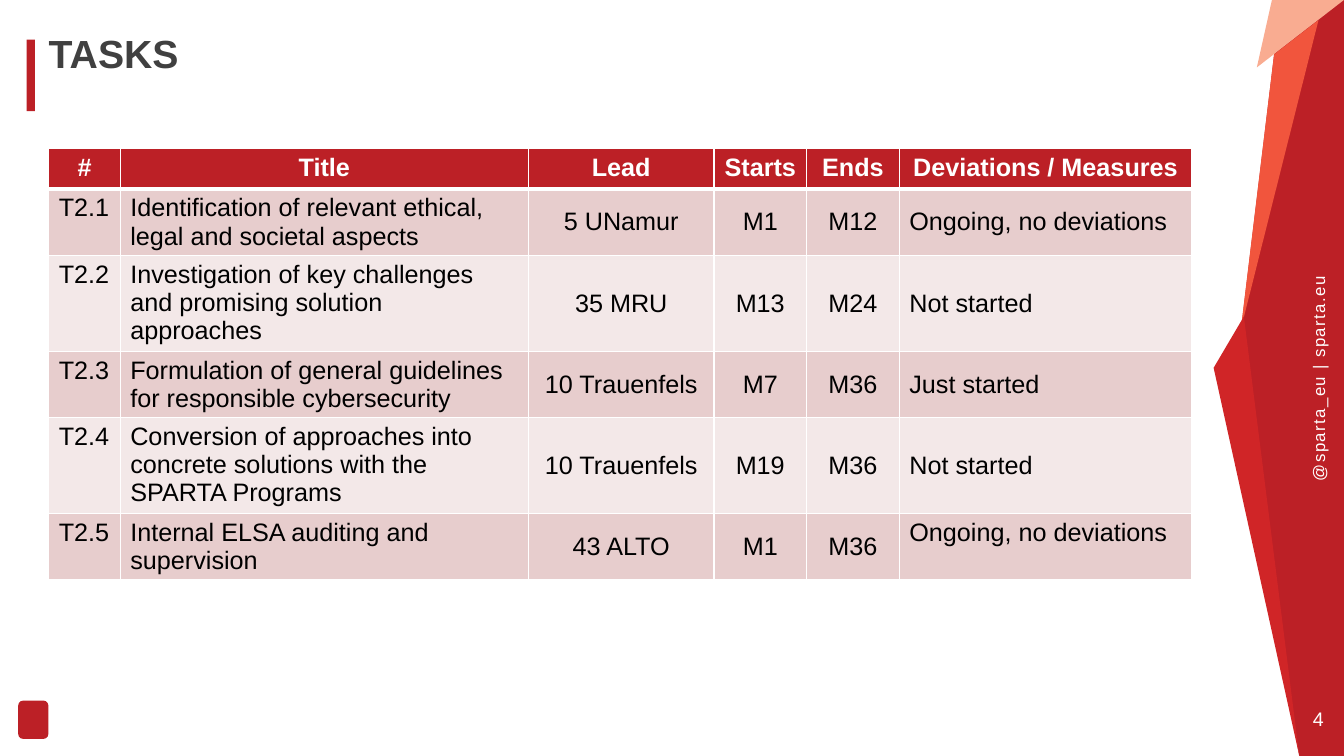
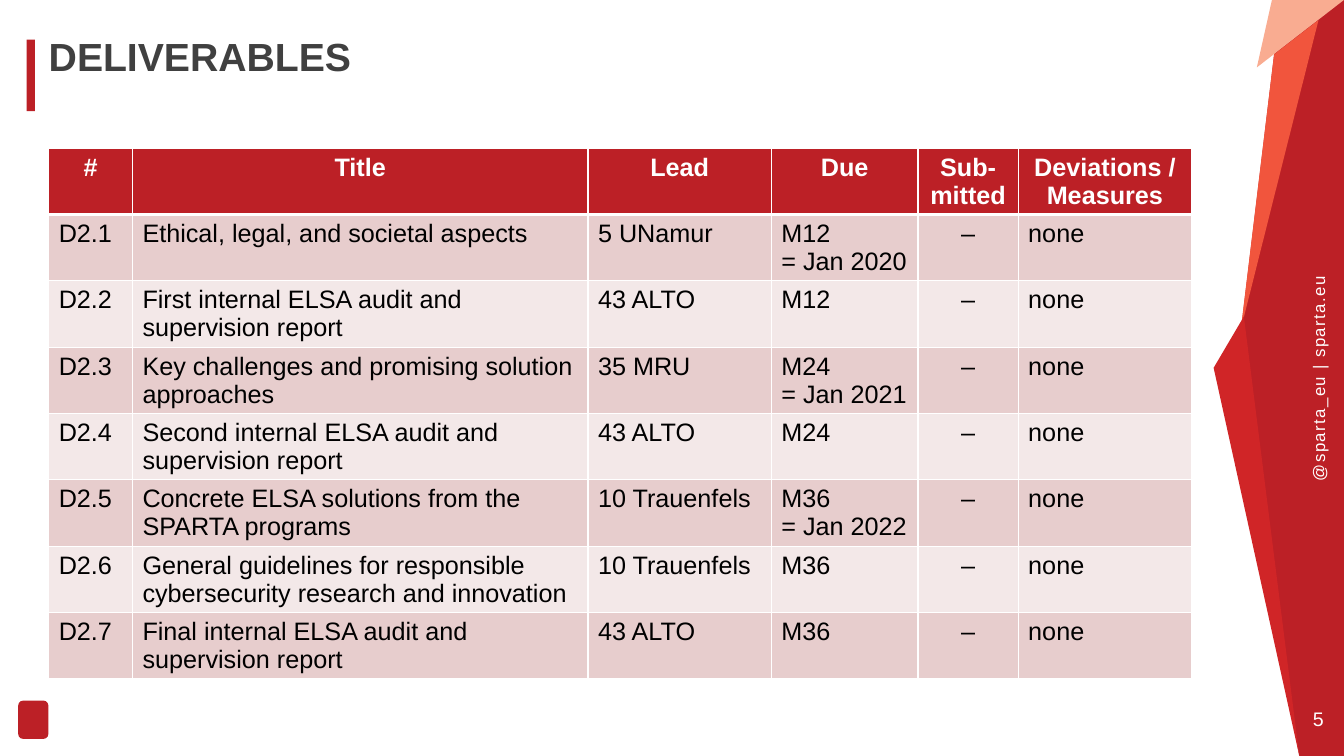
import pptx
import pptx.util
import pptx.dml.color
import pptx.enum.shapes
import pptx.enum.text
import pptx.oxml
import pptx.oxml.ns

Pt = pptx.util.Pt
RGBColor = pptx.dml.color.RGBColor
ALIGN = pptx.enum.text.PP_ALIGN
ANCHOR = pptx.enum.text.MSO_ANCHOR
SHAPE = pptx.enum.shapes.MSO_SHAPE

# Shared style
FONT = "Arial"
WHITE = RGBColor(0xFF, 0xFF, 0xFF)
BLACK = RGBColor(0x00, 0x00, 0x00)
GREY = RGBColor(0x40, 0x40, 0x40)
RED = RGBColor(0xBC, 0x20, 0x26)
BRIGHT_RED = RGBColor(0xD0, 0x25, 0x27)
ORANGE = RGBColor(0xF1, 0x55, 0x3D)
PEACH = RGBColor(0xF9, 0xAC, 0x91)
ROW_DARK = RGBColor(0xE7, 0xCD, 0xCD)
ROW_LIGHT = RGBColor(0xF3, 0xE8, 0xE8)

PAGE_WIDTH, PAGE_HEIGHT = 960, 540
LEFT, CONTENT_WIDTH = 34.8, 816.5
TABLE_TOP = 105.8
ONE_LINE, TWO_LINES, THREE_LINES = 29.2, 47.4, 68.4
THIN, THICK = 1, 3

# Facets of the band at the right edge, back to front
BAND_FACETS = [
    (RED, [(960, 0), (960, 540), (928.1, 540), (880.6, 283.7), (910.1, 38.9), (918.7, 0)]),
    (PEACH, [(960, 0), (897.8, 48.2), (908.6, 0)]),
    (ORANGE, [(941.8, 14.4), (886.3, 235.4), (910.1, 38.9)]),
    (BRIGHT_RED, [(888.5, 226.1), (928.1, 540), (866.9, 262.8)]),
]

# Table columns: heading, width, alignment, vertical anchor
TASK_COLUMNS = [
    ("#", 51.1, ALIGN.LEFT, ANCHOR.TOP),
    ("Title", 291.6, ALIGN.LEFT, ANCHOR.TOP),
    ("Lead", 132.5, ALIGN.CENTER, ANCHOR.MIDDLE),
    ("Starts", 66.2, ALIGN.CENTER, ANCHOR.MIDDLE),
    ("Ends", 66.2, ALIGN.CENTER, ANCHOR.MIDDLE),
    ("Deviations / Measures", 208.9, ALIGN.LEFT, ANCHOR.MIDDLE),
]
TASK_HEIGHTS = [ONE_LINE, TWO_LINES, THREE_LINES, TWO_LINES, THREE_LINES, TWO_LINES]
TASKS = [
    ("T2.1", "Identification of relevant ethical, legal and societal aspects",
     "5 UNamur", "M1", "M12", "Ongoing, no deviations"),
    ("T2.2", "Investigation of key challenges and promising solution approaches",
     "35 MRU", "M13", "M24", "Not started"),
    ("T2.3", "Formulation of general guidelines for responsible cybersecurity",
     "10 Trauenfels", "M7", "M36", "Just started"),
    ("T2.4", "Conversion of approaches into concrete solutions with the SPARTA Programs",
     "10 Trauenfels", "M19", "M36", "Not started"),
    ("T2.5", "Internal ELSA auditing and supervision",
     "43 ALTO", "M1", "M36", "Ongoing, no deviations"),
]
DELIVERABLE_COLUMNS = [
    ("#", 59.8, ALIGN.LEFT, ANCHOR.TOP),
    ("Title", 325.4, ALIGN.LEFT, ANCHOR.TOP),
    ("Lead", 131, ALIGN.LEFT, ANCHOR.TOP),
    ("Due", 104.8, ALIGN.LEFT, ANCHOR.TOP),
    ("Sub-mitted", 71.5, ALIGN.CENTER, ANCHOR.TOP),
    ("Deviations / Measures", 124, ALIGN.LEFT, ANCHOR.TOP),
]
DELIVERABLES = [
    ("Ethical, legal, and societal aspects", "5 UNamur", "M12\n= Jan 2020"),
    ("First internal ELSA audit and supervision report", "43 ALTO", "M12"),
    ("Key challenges and promising solution approaches", "35 MRU", "M24\n= Jan 2021"),
    ("Second internal ELSA audit and supervision report", "43 ALTO", "M24"),
    ("Concrete ELSA solutions from the SPARTA programs", "10 Trauenfels", "M36\n= Jan 2022"),
    ("General guidelines for responsible cybersecurity research and innovation",
     "10 Trauenfels", "M36"),
    ("Final internal ELSA audit and supervision report", "43 ALTO", "M36"),
]


def write(para, text, size, color, bold=False, align=ALIGN.LEFT):
    """Fill a paragraph with one run per line of text."""
    para.alignment = align
    for index, line in enumerate(text.split("\n")):
        if index:
            para.add_line_break()
        span = para.add_run()
        span.text = line
        span.font.name = FONT
        span.font.size = Pt(size)
        span.font.bold = bold
        span.font.color.rgb = color


def clear_insets(frame):
    frame.margin_left = frame.margin_right = frame.margin_top = frame.margin_bottom = 0


def paint(shape, color):
    shape.fill.solid()
    shape.fill.fore_color.rgb = color
    shape.line.fill.background()
    shape.shadow.inherit = False
    return shape


def add_facet(page, color, corners):
    points = [(Pt(x), Pt(y)) for x, y in corners]
    builder = page.shapes.build_freeform(*points[0])
    builder.add_line_segments(points[1:], close=True)
    return paint(builder.convert_to_shape(), color)


def add_block(page, kind, left, top, width, height):
    return paint(page.shapes.add_shape(kind, Pt(left), Pt(top), Pt(width), Pt(height)), RED)


def add_label(page, text, size, left, top, width, height):
    """Add a centred white one-line label."""
    box = page.shapes.add_textbox(Pt(left), Pt(top), Pt(width), Pt(height))
    frame = box.text_frame
    clear_insets(frame)
    frame.word_wrap = False
    frame.vertical_anchor = ANCHOR.MIDDLE
    write(frame.paragraphs[0], text, size, WHITE, align=ALIGN.CENTER)
    return box


def furnish_layout(layout, page):
    """Draw the shared parts on a page, then move them to its layout."""
    for holder in list(layout.placeholders):
        if holder.placeholder_format.idx:
            holder.element.getparent().remove(holder.element)
    parts = [add_facet(page, color, corners) for color, corners in BAND_FACETS]
    handle = add_label(page, "@sparta_eu | sparta.eu", 12, 867.6, 263.3, 148.3, 14.4)
    handle.rotation = 270
    handle.text_frame.paragraphs[0].runs[0].font._element.set("spc", "100")
    parts.append(handle)
    parts.append(add_block(page, SHAPE.RECTANGLE, 19.1, 28.3, 5.8, 51.1))
    parts.append(add_block(page, SHAPE.ROUNDED_RECTANGLE, 13, 500.4, 21.6, 27.4))
    for part in parts:
        layout.shapes.element.append(part.element)


def set_title(page, text, top):
    title = page.shapes.title
    title.left, title.top = Pt(LEFT), Pt(top)
    title.width, title.height = Pt(CONTENT_WIDTH), Pt(62.6)
    frame = title.text_frame
    clear_insets(frame)
    frame.word_wrap = True
    frame.auto_size = pptx.enum.text.MSO_AUTO_SIZE.NONE
    frame.vertical_anchor = ANCHOR.TOP
    para = frame.paragraphs[0]
    para.line_spacing = 0.9
    write(para, text, 28, GREY, bold=True)


def set_borders(cell, top, bottom):
    """Give a cell white borders; they come before its fill in the XML."""
    properties = cell._tc.get_or_add_tcPr()
    widths = {"lnL": THIN, "lnR": THIN, "lnT": top, "lnB": bottom}
    for index, (side, width) in enumerate(widths.items()):
        line = pptx.oxml.parse_xml(
            f'<a:{side} {pptx.oxml.ns.nsdecls("a")} w="{Pt(width)}">'
            f'<a:solidFill><a:srgbClr val="{WHITE}"/></a:solidFill></a:{side}>')
        properties.insert(index, line)


def fill_cell(cell, text, fill, color, bold, align, anchor):
    cell.fill.solid()
    cell.fill.fore_color.rgb = fill
    cell.vertical_anchor = anchor
    cell.margin_top = Pt(3.6 if anchor == ANCHOR.TOP else 0)
    cell.margin_bottom = 0
    write(cell.text_frame.paragraphs[0], text, 18, color, bold, align)


def add_grid(page, columns, rows, heights):
    """Add a table with a red heading row and alternating body rows."""
    table = page.shapes.add_table(
        len(heights), len(columns), Pt(LEFT), Pt(TABLE_TOP),
        Pt(CONTENT_WIDTH), Pt(sum(heights))).table
    table.horz_banding = False
    for row, height in zip(table.rows, heights):
        row.height = Pt(height)
    for column, (heading, width, align, anchor) in enumerate(columns):
        table.columns[column].width = Pt(width)
        cell = table.cell(0, column)
        fill_cell(cell, heading, RED, WHITE, True, ALIGN.CENTER, ANCHOR.TOP)
        set_borders(cell, THIN, THICK)
        for index, row in enumerate(rows, start=1):
            cell = table.cell(index, column)
            fill = ROW_DARK if index % 2 else ROW_LIGHT
            fill_cell(cell, row[column], fill, BLACK, False, align, anchor)
            set_borders(cell, THICK if index == 1 else THIN, THIN)
    return table


def add_page(deck, layout, title, title_top, number):
    page = deck.slides.add_slide(layout)
    set_title(page, title, title_top)
    add_label(page, str(number), 14, 933.1, 504.7, 17.3, 17.3)
    return page


def main():
    deck = pptx.Presentation()
    deck.slide_width, deck.slide_height = Pt(PAGE_WIDTH), Pt(PAGE_HEIGHT)
    layout = deck.slide_layouts[5]

    # Tasks
    page = add_page(deck, layout, "TASKS", 24.6, 4)
    furnish_layout(layout, page)
    table = add_grid(page, TASK_COLUMNS, TASKS, TASK_HEIGHTS)
    last_cell = table.cell(len(TASKS), len(TASK_COLUMNS) - 1)
    last_cell.vertical_anchor = ANCHOR.TOP
    last_cell.margin_top = Pt(3.6)

    # Deliverables
    page = add_page(deck, layout, "DELIVERABLES", 26.8, 5)
    rows = [(f"D2.{index}", *row, "–", "none")
            for index, row in enumerate(DELIVERABLES, start=1)]
    add_grid(page, DELIVERABLE_COLUMNS, rows, [TWO_LINES] * (len(rows) + 1))

    deck.save("out.pptx")


if __name__ == "__main__":
    main()
